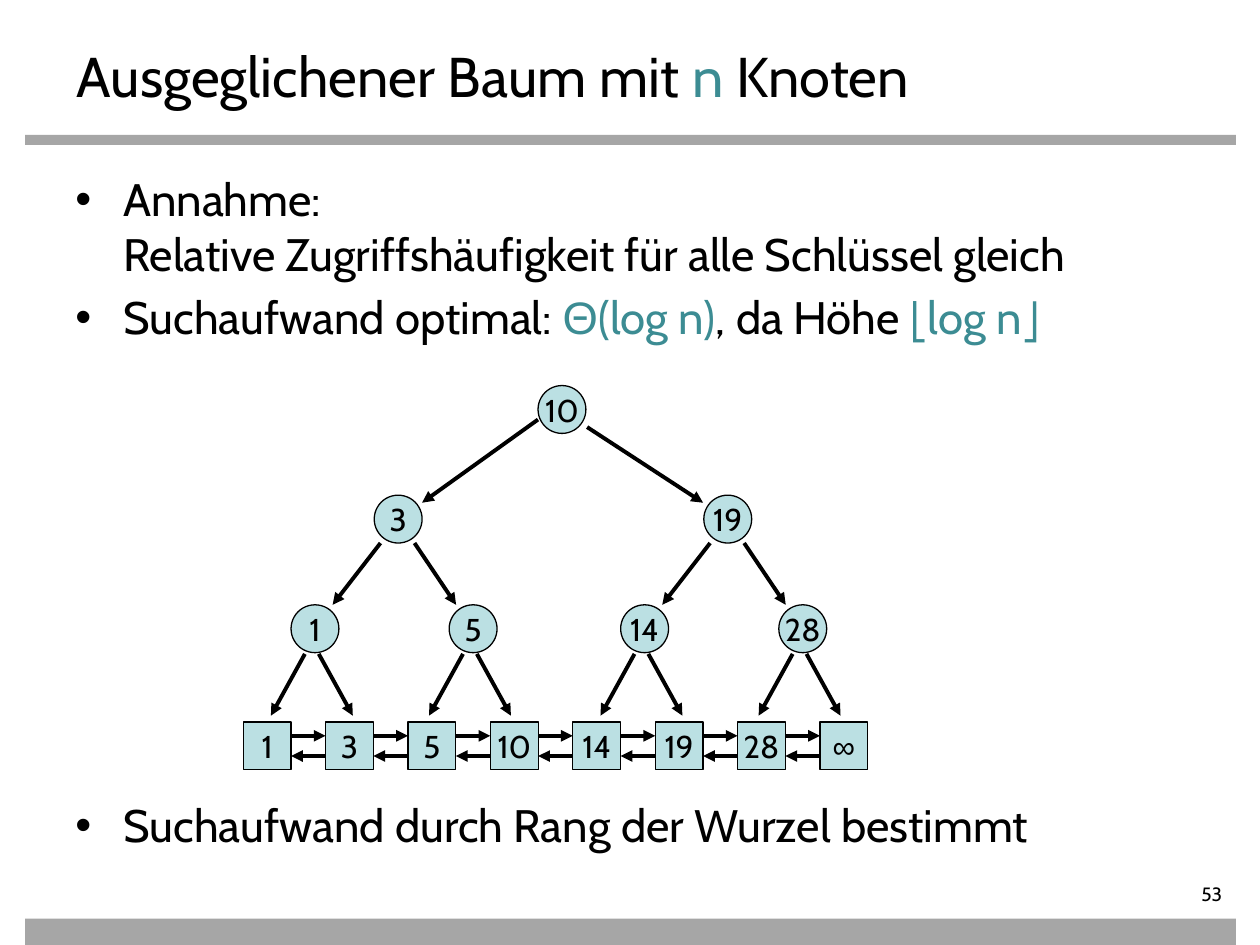
from lxml.etree import SubElement
from pptx import Presentation
from pptx.dml.color import RGBColor
from pptx.enum.shapes import MSO_CONNECTOR, MSO_SHAPE
from pptx.enum.text import MSO_ANCHOR, MSO_AUTO_SIZE, PP_ALIGN
from pptx.oxml.ns import qn
from pptx.util import Inches, Pt

BLACK, TEAL, GREY, PALE = "000000", "3C8C93", "A6A6A6", "BBE0E3"
NODE = 0.38
PITCH = 0.654
LEVELS = (0, 0.87, 1.74, 2.67)


def color(hex_text):
    return RGBColor.from_string(hex_text)


def write(para, text, size=26, font="Cabin", ink=BLACK):
    """Append one formatted span to a paragraph."""
    span = para.add_run()
    span.text = text
    span.font.size = Pt(size)
    span.font.name = font
    span.font.color.rgb = color(ink)


def set_frame(frame, margins=(0.1, 0.05, 0.1, 0.05), wrap=True, anchor=MSO_ANCHOR.TOP):
    frame.auto_size = MSO_AUTO_SIZE.NONE
    frame.word_wrap = wrap
    frame.vertical_anchor = anchor
    (frame.margin_left, frame.margin_top,
     frame.margin_right, frame.margin_bottom) = map(Inches, margins)


def add_bar(page, left, top, width, height):
    bar = page.shapes.add_shape(MSO_SHAPE.RECTANGLE, *map(Inches, (left, top, width, height)))
    bar.shadow.inherit = False
    bar.fill.solid()
    bar.fill.fore_color.rgb = color(GREY)
    bar.line.fill.background()


def add_title(page, left, top, width, height):
    title = page.shapes.title
    title.left, title.top, title.width, title.height = map(Inches, (left, top, width, height))
    set_frame(title.text_frame)
    para = title.text_frame.paragraphs[0]
    para.alignment = PP_ALIGN.LEFT
    write(para, "Ausgeglichener Baum mit ", size=32)
    write(para, "n ", size=32, ink=TEAL)
    write(para, "Knoten", size=32)


def start_bullet(para, space_before=0):
    properties = para._p.get_or_add_pPr()
    properties.set("marL", str(Inches(0.38)))
    properties.set("indent", str(-Inches(0.38)))
    para.space_before = Pt(space_before)
    SubElement(properties, qn("a:buFont"), typeface="Arial")
    SubElement(properties, qn("a:buChar"), char="•")


def add_bullets(page, left, top, width, height):
    box = page.shapes.add_textbox(*map(Inches, (left, top, width, height)))
    frame = box.text_frame
    set_frame(frame)

    assumption = frame.paragraphs[0]
    start_bullet(assumption)
    write(assumption, "Annahme: ")
    assumption.add_line_break()
    write(assumption, "Relative Zugriffshäufigkeit für alle Schlüssel gleich")

    effort = frame.add_paragraph()
    start_bullet(effort, 5.2)
    write(effort, "Suchaufwand optimal: ")
    write(effort, "Θ", font="Arial", ink=TEAL)
    write(effort, "(log n)", ink=TEAL)
    write(effort, ", da Höhe ")
    write(effort, "⎣", size=20, ink=TEAL)
    write(effort, "log n", ink=TEAL)
    write(effort, "⎦", size=20, ink=TEAL)

    # The tree stands in the gap above the last bullet.
    rank = frame.add_paragraph()
    start_bullet(rank, 259)
    write(rank, "Suchaufwand durch Rang der Wurzel bestimmt")


def add_node(tree, left, top, key, shape=MSO_SHAPE.OVAL):
    node = tree.shapes.add_shape(shape, *map(Inches, (left, top, NODE, NODE)))
    node.shadow.inherit = False
    node.fill.solid()
    node.fill.fore_color.rgb = color(PALE)
    node.line.color.rgb = color(BLACK)
    node.line.width = Pt(0.75)
    set_frame(node.text_frame, (0, 0, 0, 0), wrap=False, anchor=MSO_ANCHOR.MIDDLE)
    para = node.text_frame.paragraphs[0]
    para.alignment = PP_ALIGN.CENTER
    write(para, key, size=18, font="Arial" if key == "∞" else "Cabin")


def add_arrow(tree, left, top, start, end):
    """Draw an arrow between two points given relative to (left, top)."""
    arrow = tree.shapes.add_connector(
        MSO_CONNECTOR.STRAIGHT,
        Inches(left + start[0]), Inches(top + start[1]),
        Inches(left + end[0]), Inches(top + end[1]))
    arrow.line.color.rgb = color(BLACK)
    arrow.line.width = Pt(2.25)
    SubElement(arrow.line._get_or_add_ln(), qn("a:tailEnd"), type="triangle")
    SubElement(arrow._element.spPr, qn("a:effectLst"))


def add_subtree(tree, left, top, root, children):
    """Draw an inner node with two children and the arrows to four leaves."""
    add_node(tree, left + 1.04, top, root)
    add_arrow(tree, left, top, (1.09, 0.38), (0.71, 0.87))
    add_arrow(tree, left, top, (1.36, 0.38), (1.69, 0.87))
    for offset, key in zip((0.38, 1.635), children):
        x, y = left + offset, top + 0.87
        add_node(tree, x, y, key)
        add_arrow(tree, x, y, (0.11, 0.39), (-0.16, 0.88))
        add_arrow(tree, x, y, (0.22, 0.39), (0.49, 0.88))


def add_leaves(tree, left, top, keys):
    for index, key in enumerate(keys):
        x = left + index * PITCH
        add_node(tree, x, top, key, MSO_SHAPE.RECTANGLE)
        if index < len(keys) - 1:
            add_arrow(tree, x, top, (NODE, 0.11), (PITCH, 0.11))
            add_arrow(tree, x, top, (PITCH, 0.27), (NODE, 0.27))


def add_tree(page, left, top):
    tree = page.shapes.add_group_shape()
    add_leaves(tree, left, top + LEVELS[3], ("1", "3", "5", "10", "14", "19", "28", "∞"))
    add_subtree(tree, left, top + LEVELS[1], "3", ("1", "5"))
    add_subtree(tree, left + 4 * PITCH, top + LEVELS[1], "19", ("14", "28"))
    add_node(tree, left + 2.34, top, "10")
    add_arrow(tree, left, top, (2.34, 0.27), (1.42, 0.93))
    add_arrow(tree, left, top, (2.73, 0.33), (3.65, 0.93))


def add_page_number(page, left, top, width, height):
    box = page.shapes.add_textbox(*map(Inches, (left, top, width, height)))
    set_frame(box.text_frame, (0, 0, 0.1, 0))
    para = box.text_frame.paragraphs[0]
    para.alignment = PP_ALIGN.RIGHT
    write(para, "53", size=11)


def main():
    deck = Presentation()
    deck.slide_width, deck.slide_height = Inches(10), Inches(7.5)
    page = deck.slides.add_slide(deck.slide_layouts[5])
    add_bar(page, 0.2, 1.07, 9.61, 0.08)
    add_bar(page, 0.2, 7.29, 9.61, 0.21)
    add_title(page, 0.51, 0.28, 9, 0.55)
    add_bullets(page, 0.5, 1.31, 9, 5.43)
    add_page_number(page, 8.7, 7, 1.1, 0.22)
    add_tree(page, 1.93, 3.06)
    deck.save("out.pptx")


if __name__ == "__main__":
    main()
